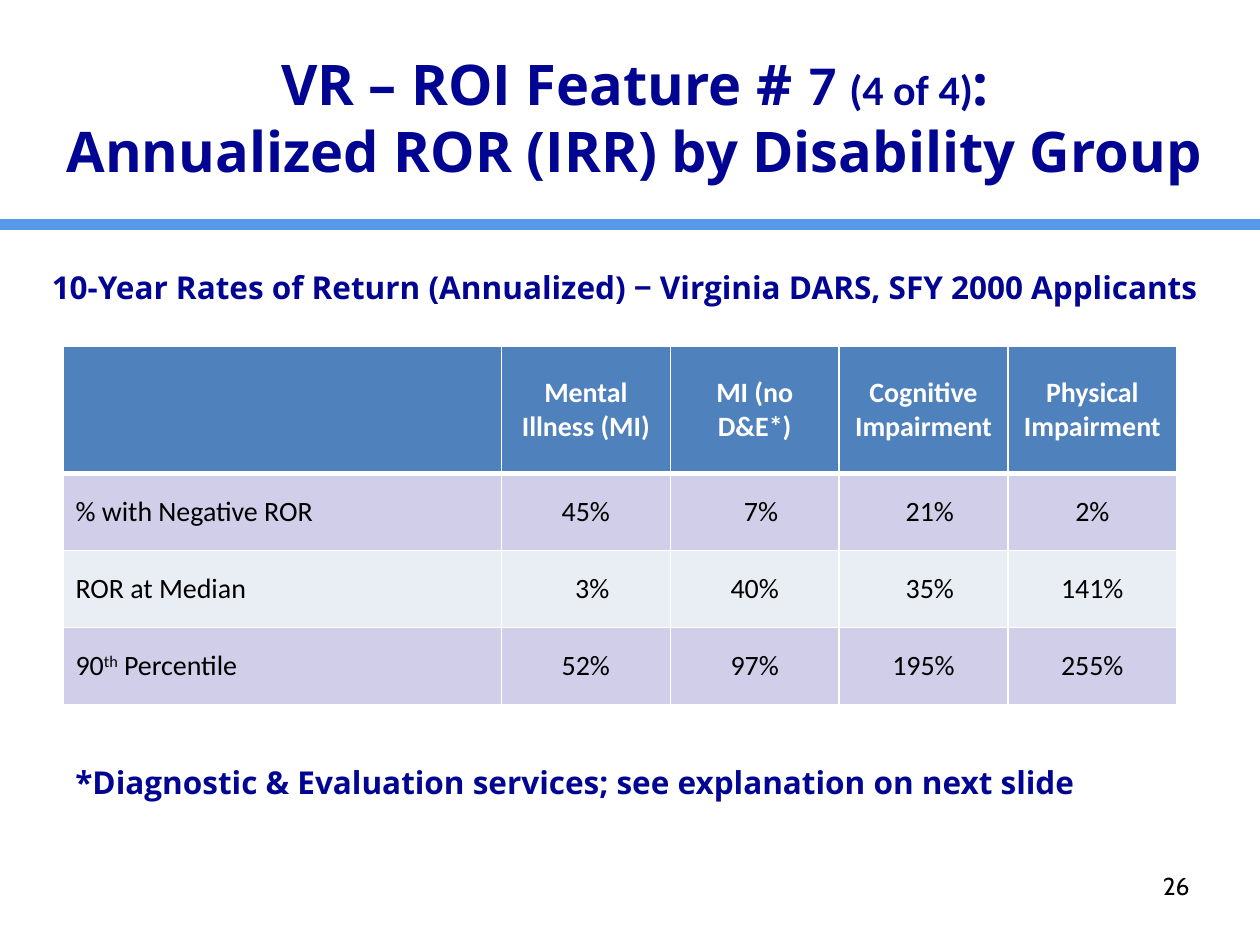
from typing import NamedTuple

import pptx
import pptx.dml.color
import pptx.enum.shapes
import pptx.enum.text
import pptx.oxml.ns
import pptx.util
from lxml import etree

Inches = pptx.util.Inches
Pt = pptx.util.Pt
ALIGN = pptx.enum.text.PP_ALIGN
ANCHOR = pptx.enum.text.MSO_ANCHOR

COLORS = {
    "navy": "020592",
    "rule": "5799E8",
    "white": "FFFFFF",
    "black": "000000",
    "header": "4F81BD",
    "lilac": "D0CEE8",
    "pale": "E9EDF4",
}


class Span(NamedTuple):
    text: str
    size: float = 18
    font: str = "Open Sans"
    color: str = "navy"
    bold: bool = True
    baseline: int = 0


class Box(NamedTuple):
    left: float
    top: float
    width: float
    height: float
    lines: list[list[Span]]
    align: ALIGN = ALIGN.CENTER
    anchor: ANCHOR = ANCHOR.TOP


class Rule(NamedTuple):
    top: float
    color: str
    weight: float


class Row(NamedTuple):
    label: list[Span]
    values: list[str]
    fill: str
    height: float = 0.61
    indented: tuple[int, ...] = ()


def header_span(text: str) -> Span:
    return Span(text, 16, "Calibri", "white")


def body_span(text: str, baseline: int = 0) -> Span:
    return Span(text, 16, "Calibri", "black", False, baseline)


RULES = [Rule(1.78, "rule", 7), Rule(1.73, "white", 0.5)]

BOXES = [
    Box(0.25, 0.3, 9.58, 1.25, [
        [Span("VR – ROI Feature # ", 32), Span("7 ", 32, "Calibri"),
         Span("(4 of 4)", 24, "Calibri"), Span(":", 32)],
        [Span("Annualized ROR (IRR) by Disability Group", 32)],
    ], anchor=ANCHOR.MIDDLE),
    Box(9, 6.83, 0.67, 0.4, [[Span("26", 14, "Cabin", "black", False)]], anchor=ANCHOR.MIDDLE),
    Box(0.25, 2.08, 9.42, 0.4,
        [[Span("10-Year Rates of Return (Annualized) − Virginia DARS, SFY 2000 Applicants")]]),
    Box(0.5, 6.01, 8.83, 0.4,
        [[Span("*Diagnostic & Evaluation services; see explanation on next slide")]],
        ALIGN.LEFT),
]

COLUMN_WIDTHS = [3.48] + [1.34] * 4
HEADINGS = ["Mental Illness (MI)", "MI (no D&E*)", "Cognitive Impairment", "Physical Impairment"]
ROWS = [
    Row([], HEADINGS, "header", 1.01),
    Row([body_span("% with Negative ROR")], ["45%", "7%", "21%", "2%"], "lilac", indented=(2, 3)),
    Row([body_span("ROR at Median")], ["3%", "40%", "35%", "141%"], "pale", indented=(1, 3)),
    Row([body_span("90"), body_span("th", 30000), body_span(" Percentile")],
        ["52%", "97%", "195%", "255%"], "lilac"),
]


def rgb(name: str) -> pptx.dml.color.RGBColor:
    return pptx.dml.color.RGBColor.from_string(COLORS[name])


def add_span(para, span: Span) -> None:
    run = para.add_run()
    run.text = span.text
    run.font.size = Pt(span.size)
    run.font.name = span.font
    run.font.bold = span.bold
    run.font.color.rgb = rgb(span.color)
    if span.baseline:
        run.font._element.set("baseline", str(span.baseline))


def draw_rule(page, rule: Rule) -> None:
    line = page.shapes.add_connector(
        pptx.enum.shapes.MSO_CONNECTOR.STRAIGHT,
        Inches(0), Inches(rule.top), Inches(10), Inches(rule.top))
    line.line.color.rgb = rgb(rule.color)
    line.line.width = Pt(rule.weight)
    etree.SubElement(line._element.spPr, pptx.oxml.ns.qn("a:effectLst"))


def draw_box(page, box: Box) -> None:
    shape = page.shapes.add_textbox(
        Inches(box.left), Inches(box.top), Inches(box.width), Inches(box.height))
    frame = shape.text_frame
    frame.word_wrap = True
    frame.vertical_anchor = box.anchor
    para = frame.paragraphs[0]
    para.alignment = box.align
    for index, line in enumerate(box.lines):
        if index:
            para.add_line_break()
        for span in line:
            add_span(para, span)


def set_borders(cell, weights: dict[str, float]) -> None:
    qn = pptx.oxml.ns.qn
    properties = cell._tc.get_or_add_tcPr()
    for index, (side, weight) in enumerate(weights.items()):
        border = etree.Element(qn(f"a:ln{side}"), w=str(Pt(weight)))
        fill = etree.SubElement(border, qn("a:solidFill"))
        etree.SubElement(fill, qn("a:srgbClr"), val=COLORS["white"])
        properties.insert(index, border)


def fill_cell(cell, spans: list[Span], fill: str, align: ALIGN) -> None:
    cell.fill.solid()
    cell.fill.fore_color.rgb = rgb(fill)
    cell.vertical_anchor = ANCHOR.MIDDLE
    para = cell.text_frame.paragraphs[0]
    para.alignment = align
    for span in spans:
        add_span(para, span)


def draw_table(page, rows: list[Row]) -> None:
    frame = page.shapes.add_table(
        len(rows), len(COLUMN_WIDTHS), Inches(0.5), Inches(2.75),
        Inches(sum(COLUMN_WIDTHS)), Inches(sum(row.height for row in rows)))
    table = frame.table
    for column, width in zip(table.columns, COLUMN_WIDTHS):
        column.width = Inches(width)
    for r, row in enumerate(rows):
        table.rows[r].height = Inches(row.height)
        make_span = body_span if r else header_span
        contents = [row.label] + [[make_span(value)] for value in row.values]
        for c, spans in enumerate(contents):
            cell = table.cell(r, c)
            fill_cell(cell, spans, row.fill, ALIGN.CENTER if c else ALIGN.LEFT)
            if c in row.indented:
                cell.margin_left = Inches(0.2)
            set_borders(cell, {"L": 1, "R": 1, "T": 3 if r == 1 else 1, "B": 1 if r else 3})


def main() -> None:
    """Build the rates of return slide."""
    deck = pptx.Presentation()
    deck.slide_width, deck.slide_height = Inches(10), Inches(7.5)
    page = deck.slides.add_slide(deck.slide_layouts[6])
    for rule in RULES:
        draw_rule(page, rule)
    for box in BOXES:
        draw_box(page, box)
    draw_table(page, ROWS)
    deck.save("out.pptx")


if __name__ == "__main__":
    main()
